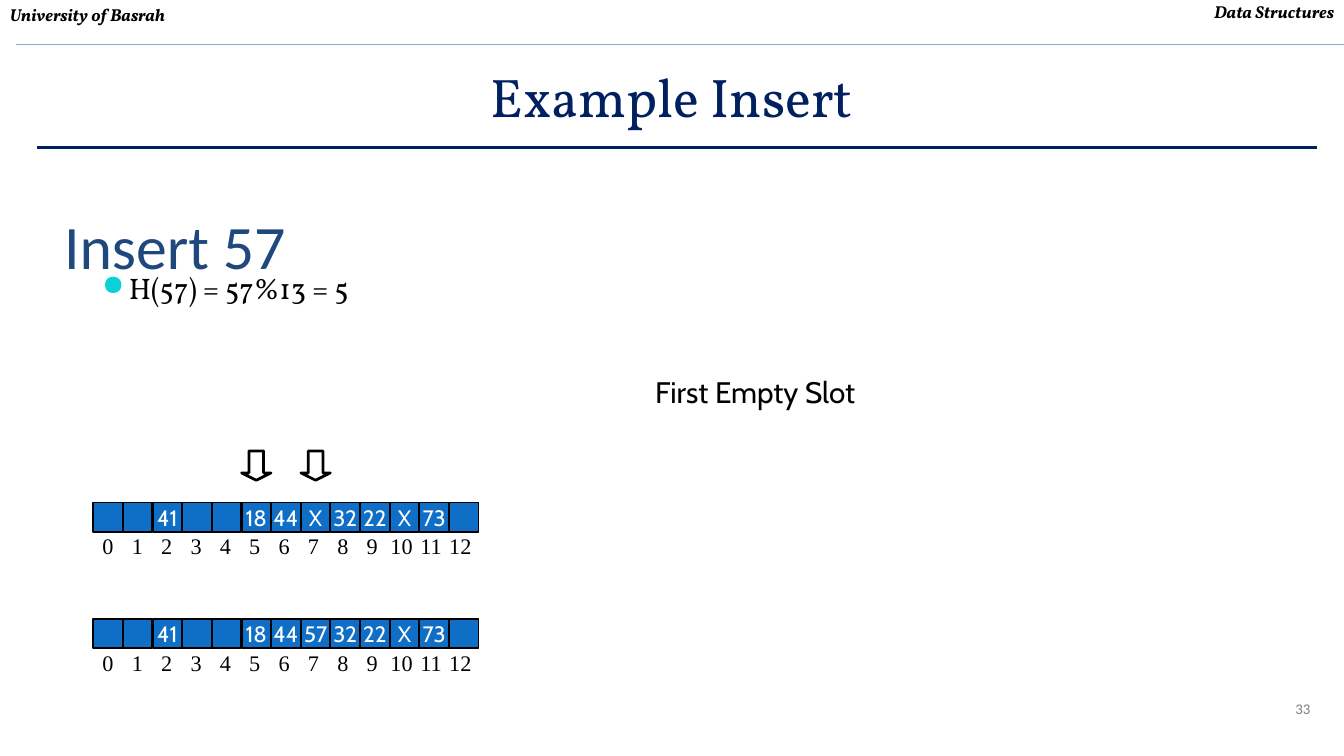
from lxml.etree import SubElement
from pptx import Presentation
from pptx.dml.color import RGBColor
from pptx.enum.shapes import MSO_CONNECTOR, MSO_SHAPE
from pptx.enum.text import MSO_ANCHOR as Anchor, MSO_AUTO_SIZE as AutoSize, PP_ALIGN as Align
from pptx.oxml.ns import qn
from pptx.util import Inches, Pt

COLORS = {
    "black": "000000", "white": "FFFFFF", "gray": "808080",
    "navy": "002060", "heading": "1F497D", "pale_rule": "8AA6DC",
    "cell": "0F6FC6", "bullet": "0BD0D9",
}

UNIVERSITY = "University of Basrah"
COURSE = "Data Structures"
TITLE = "Example Insert"
HEADING = "Insert 57"
HASH_STEP = "H(57) = 57%13 = 5"
SLOT_LABEL = "First Empty Slot"
PAGE_NUMBER = "33"

BEFORE = ["", "", "41", "", "", "18", "44", "X", "32", "22", "X", "73", ""]
AFTER = BEFORE[:7] + ["57"] + BEFORE[8:]
HASH_TABLES = [(5.65, BEFORE), (6.96, AFTER)]  # top, slots
PROBED_SLOTS = [5, 7]

RULES = [  # left, right, y, color, width
    (0.18, 15.11, 0.5, "pale_rule", 1.5),
    (0.42, 14.81, 1.66, "navy", 2),
]

TABLE_LEFT = 1.05
CELL_SIZE = 0.33
CELL_PITCH = 1 / 3
INDEX_PITCH = 0.33
INDEX_DROP = 0.29
ARROW_TOP = 5.07


def color(name):
    return RGBColor.from_string(COLORS[name])


def fill_text(shape, text, font, size, color_name, align=Align.LEFT,
              anchor=Anchor.TOP, wrap=True, bold=False):
    frame = shape.text_frame
    frame.text = text
    frame.word_wrap = wrap
    frame.vertical_anchor = anchor
    paragraph = frame.paragraphs[0]
    paragraph.alignment = align
    run_font = paragraph.runs[0].font
    run_font.name = font
    run_font.size = Pt(size)
    run_font.color.rgb = color(color_name)
    run_font.bold = run_font.italic = bold
    return frame


def add_text(slide, box, text, font, size, color_name, grow=False, **style):
    shape = slide.shapes.add_textbox(*map(Inches, box))
    frame = fill_text(shape, text, font, size, color_name, **style)
    frame.auto_size = AutoSize.SHAPE_TO_FIT_TEXT if grow else AutoSize.NONE
    return frame


def add_square(slide, kind, left, top, line_width):
    """Add a cell-sized shape with a black outline."""
    shape = slide.shapes.add_shape(
        kind, *map(Inches, (left, top, CELL_SIZE, CELL_SIZE)))
    shape.shadow.inherit = False
    shape.line.color.rgb = color("black")
    shape.line.width = Pt(line_width)
    return shape


def add_rule(slide, left, right, y, color_name, width):
    rule = slide.shapes.add_connector(
        MSO_CONNECTOR.STRAIGHT, *map(Inches, (left, y, right, y)))
    rule.line.color.rgb = color(color_name)
    rule.line.width = Pt(width)
    SubElement(rule._element.spPr, qn("a:effectLst"))


def add_bullet(paragraph):
    properties = paragraph._p.get_or_add_pPr()
    properties.set("marL", str(Inches(0.3)))
    properties.set("indent", str(-Inches(0.3)))
    bullet_color = SubElement(properties, qn("a:buClr"))
    SubElement(bullet_color, qn("a:srgbClr"), val=COLORS["bullet"])
    SubElement(properties, qn("a:buSzPct"), val="95000")
    SubElement(properties, qn("a:buChar"), char="●")


def add_hash_table(slide, top, slots):
    for index, value in enumerate(slots):
        cell = add_square(slide, MSO_SHAPE.RECTANGLE,
                          TABLE_LEFT + index * CELL_PITCH, top, 1.5)
        cell.fill.solid()
        cell.fill.fore_color.rgb = color("cell")
        if value:
            fill_text(cell, value, "Cabin", 18, "white", align=Align.CENTER,
                      anchor=Anchor.MIDDLE, wrap=False)
    for index in range(len(slots)):
        width = 0.33 if index < 10 else 0.45
        center = TABLE_LEFT + CELL_SIZE / 2 + index * INDEX_PITCH
        add_text(slide, (center - width / 2, top + INDEX_DROP, width, 0.4),
                 str(index), "Times New Roman", 18, "black", grow=True,
                 align=Align.CENTER, wrap=False)


def add_probe_arrow(slide, slot):
    arrow = add_square(slide, MSO_SHAPE.DOWN_ARROW,
                       TABLE_LEFT + slot * CELL_PITCH, ARROW_TOP, 2.25)
    arrow.adjustments[0] = 0.5
    arrow.adjustments[1] = 0.25
    arrow.fill.background()


def main():
    deck = Presentation()
    deck.slide_width, deck.slide_height = Inches(15.11), Inches(8.5)
    slide = deck.slides.add_slide(deck.slide_layouts[6])

    add_text(slide, (13.16, 7.82, 1.67, 0.7), PAGE_NUMBER, "Calibri", 12, "gray",
             grow=True, align=Align.RIGHT)
    add_text(slide, (0, -0.03, 15.1, 0.34), COURSE, "Vollkorn", 14, "black",
             grow=True, align=Align.RIGHT, bold=True)
    add_text(slide, (0.01, 0, 7.85, 0.34), UNIVERSITY, "Vollkorn", 14, "black",
             grow=True, bold=True)
    for rule in RULES:
        add_rule(slide, *rule)

    add_text(slide, (0, 0.5, 15.11, 1.15), TITLE, "Vollkorn", 44, "navy",
             align=Align.CENTER, anchor=Anchor.MIDDLE)
    heading = add_text(slide, (0.72, 1.92, 9, 1.25), HEADING, "Calibri", 50,
                       "heading", anchor=Anchor.BOTTOM)
    heading.margin_left = heading.margin_right = heading.margin_bottom = 0
    step = add_text(slide, (1.05, 2.98, 4.17, 2.42), HASH_STEP, "Vollkorn", 24, "black")
    add_bullet(step.paragraphs[0])

    for top, slots in HASH_TABLES:
        add_hash_table(slide, top, slots)
    for slot in PROBED_SLOTS:
        add_probe_arrow(slide, slot)
    add_text(slide, (7.22, 4.15, 2.54, 0.51), SLOT_LABEL, "Cabin", 24, "black",
             grow=True, align=Align.CENTER, wrap=False)

    deck.save("out.pptx")


if __name__ == "__main__":
    main()
